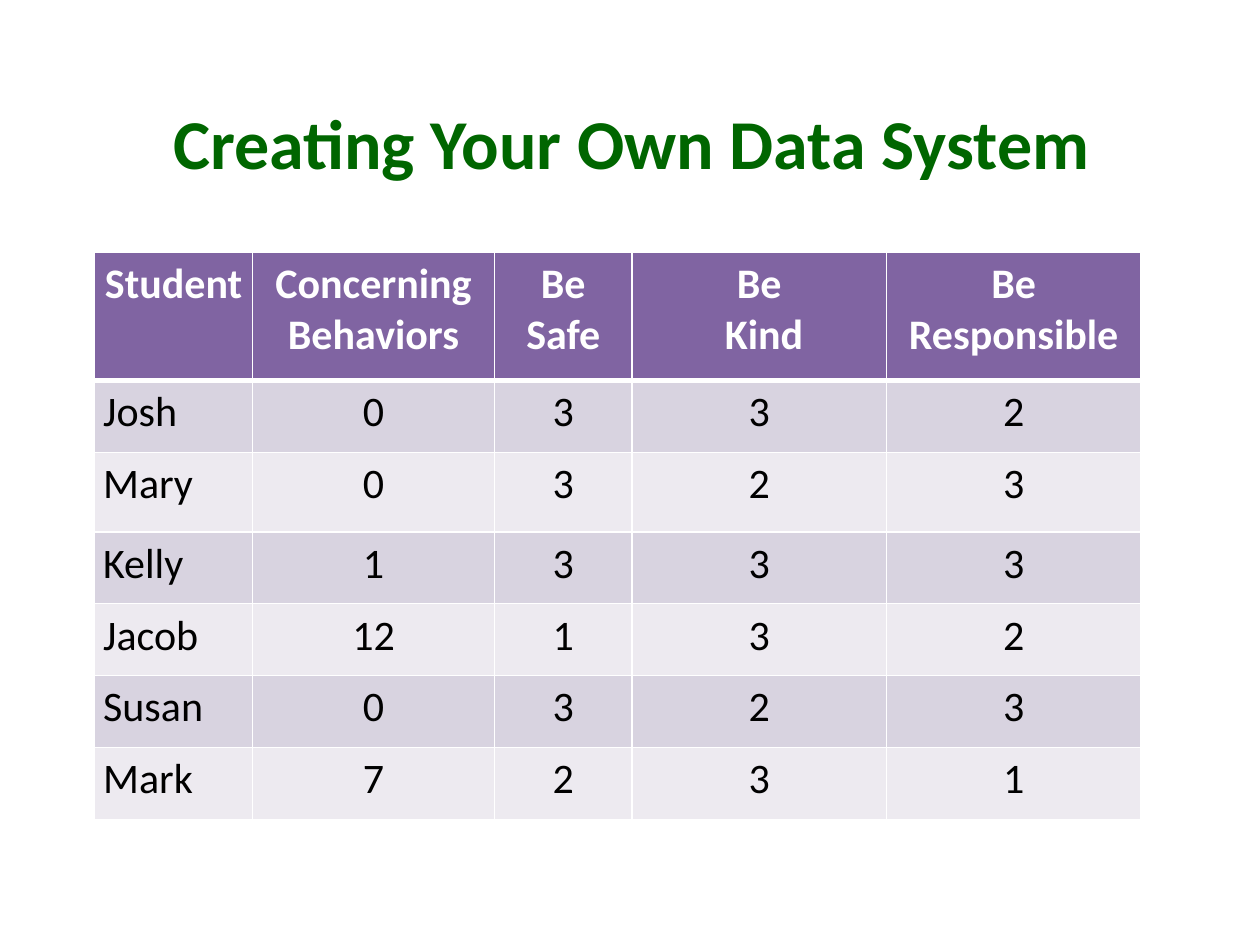
from lxml import etree
from pptx import Presentation
from pptx.dml.color import RGBColor
from pptx.enum.text import MSO_VERTICAL_ANCHOR as Anchor, PP_PARAGRAPH_ALIGNMENT as Align
from pptx.oxml.ns import qn
from pptx.util import Cm, Pt

COLORS = {
    "title": "006600",
    "header": "8064A2",
    "odd_row": "D8D3E0",
    "even_row": "EDEAF0",
    "border": "FFFFFF",
    "header_text": "FFFFFF",
    "body_text": "000000",
}
FONT = "Calibri"
HEADERS = ["Student", "Concerning Behaviors", "Be Safe", "Be\n Kind", "Be Responsible"]
SCORES = [
    ["Josh", 0, 3, 3, 2],
    ["Mary", 0, 3, 2, 3],
    ["Kelly", 1, 3, 3, 3],
    ["Jacob", 12, 1, 3, 2],
    ["Susan", 0, 3, 2, 3],
    ["Mark", 7, 2, 3, 1],
]
COLUMN_WIDTHS = [3.18, 4.88, 2.77, 5.13, 5.13]
ROW_HEIGHTS = [2.59, 1.45, 1.6, 1.45, 1.45, 1.45, 1.45]


def format_paragraph(paragraph, size, color, bold, alignment):
    paragraph.alignment = alignment
    for run in paragraph.runs:
        run.font.name = FONT
        run.font.size = Pt(size)
        run.font.bold = bold
        run.font.color.rgb = RGBColor.from_string(COLORS[color])


def set_borders(cell, widths):
    properties = cell._tc.get_or_add_tcPr()
    for index, (side, width) in enumerate(widths.items()):
        line = etree.Element(qn(f"a:ln{side}"), w=str(Pt(width)))
        fill = etree.SubElement(line, qn("a:solidFill"))
        etree.SubElement(fill, qn("a:srgbClr"), val=COLORS["border"])
        properties.insert(index, line)


def place_title(slide, left, top, width, height):
    title = slide.shapes.title
    title.left, title.top, title.width, title.height = left, top, width, height
    title.text_frame.text = "Creating Your Own Data System"
    title.text_frame.vertical_anchor = Anchor.MIDDLE
    format_paragraph(title.text_frame.paragraphs[0], 40, "title", True, Align.CENTER)


def fill_cell(cell, text, row, column):
    is_header = row == 0
    fill = "header" if is_header else "odd_row" if row % 2 else "even_row"
    cell.fill.solid()
    cell.fill.fore_color.rgb = RGBColor.from_string(COLORS[fill])
    cell.margin_left = cell.margin_right = Cm(0.17)
    cell.margin_top = cell.margin_bottom = Cm(0.13)
    set_borders(cell, {"L": 1, "R": 1, "T": 3 if row == 1 else 1, "B": 3 if is_header else 1})
    cell.text_frame.text = text
    color = "header_text" if is_header else "body_text"
    alignment = Align.CENTER if is_header or column else Align.LEFT
    for paragraph in cell.text_frame.paragraphs:
        format_paragraph(paragraph, 24, color, is_header, alignment)


def place_score_table(slide, left, top, width, height):
    rows = [HEADERS] + SCORES
    table = slide.shapes.add_table(len(rows), len(HEADERS), left, top, width, height).table
    for column, column_width in zip(table.columns, COLUMN_WIDTHS):
        column.width = Cm(column_width)
    for row, row_height in zip(table.rows, ROW_HEIGHTS):
        row.height = Cm(row_height)
    for row, values in enumerate(rows):
        for column, value in enumerate(values):
            fill_cell(table.cell(row, column), str(value), row, column)


def main():
    presentation = Presentation()
    presentation.slide_width, presentation.slide_height = Cm(25.4), Cm(19.05)
    slide = presentation.slides.add_slide(presentation.slide_layouts[5])
    place_title(slide, Cm(1.22), Cm(1.02), Cm(23.01), Cm(3.68))
    place_score_table(slide, Cm(1.91), Cm(5.08), Cm(sum(COLUMN_WIDTHS)), Cm(sum(ROW_HEIGHTS)))
    presentation.save("out.pptx")


if __name__ == "__main__":
    main()
